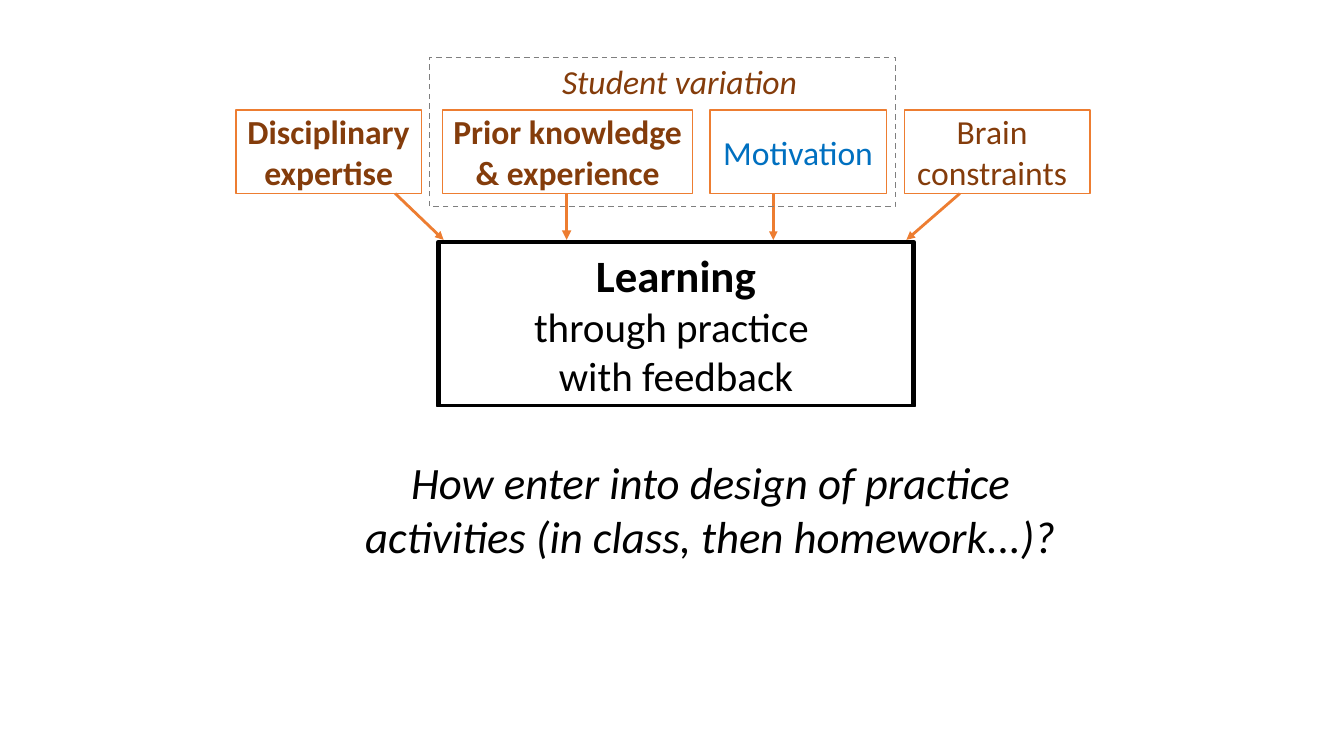
from dataclasses import dataclass

from lxml.etree import SubElement
from pptx import Presentation
from pptx.dml.color import RGBColor
from pptx.enum.dml import MSO_LINE
from pptx.enum.shapes import MSO_CONNECTOR, MSO_SHAPE
from pptx.enum.text import MSO_ANCHOR, PP_ALIGN
from pptx.oxml.ns import qn
from pptx.util import Inches, Pt


@dataclass(frozen=True)
class Theme:
    font: str = "Calibri"
    black: str = "000000"
    white: str = "FFFFFF"
    brown: str = "843C0B"
    blue: str = "0070C0"
    orange: str = "ED7D31"
    gray: str = "7F7F7F"
    label: float = 24
    body: float = 29.3
    heading: float = 32


THEME = Theme()


def add_box(s, box, line=None, width=1, fill=None, dash=None):
    sp = s.shapes.add_shape(MSO_SHAPE.RECTANGLE, *map(Inches, box))
    sp.shadow.inherit = False
    if fill:
        sp.fill.solid()
        sp.fill.fore_color.rgb = RGBColor.from_string(fill)
    else:
        sp.fill.background()
    if line:
        sp.line.color.rgb = RGBColor.from_string(line)
        sp.line.width = Pt(width)
        sp.line.dash_style = dash
    else:
        sp.line.fill.background()
    return sp


def add_text(sp, text, size=THEME.label, color=THEME.black, bold=False,
             italic=False, first=None, inset_right=0.07):
    """Write centred lines; first holds font settings for the opening line."""
    tf = sp.text_frame
    tf.word_wrap = True
    tf.vertical_anchor = MSO_ANCHOR.MIDDLE
    tf.margin_left, tf.margin_right = Inches(0.07), Inches(inset_right)
    tf.margin_top = tf.margin_bottom = 0
    for i, line in enumerate(text.split("\n")):
        p = tf.paragraphs[0] if i == 0 else tf.add_paragraph()
        p.alignment = PP_ALIGN.CENTER
        r = p.add_run()
        r.text = line
        f = r.font
        f.name, f.size, f.bold, f.italic = THEME.font, Pt(size), bold, italic
        f.color.rgb = RGBColor.from_string(color)
        if i == 0 and first:
            f.size, f.bold = Pt(first["size"]), first["bold"]


def add_arrow(s, start, end, width=2):
    c = s.shapes.add_connector(MSO_CONNECTOR.STRAIGHT,
                               *map(Inches, (*start, *end)))
    c.line.color.rgb = RGBColor.from_string(THEME.orange)
    c.line.width = Pt(width)
    SubElement(c.line._get_or_add_ln(), qn("a:tailEnd"), type="triangle")
    SubElement(c._element.spPr, qn("a:effectLst"))


def add_learning(s, box):
    sp = add_box(s, box, THEME.black, 3, THEME.white)
    add_text(sp, "Learning\nthrough practice \nwith feedback", THEME.body,
             first={"size": THEME.heading, "bold": True})


def add_factors(s, top, height, arrow_end):
    # Left, width, text, format, arrow start x, arrow end x, arrow width
    factors = [
        (2.34, 1.84, "Disciplinary\nexpertise",
         {"color": THEME.brown, "bold": True}, 3.92, 4.4, 2),
        (4.39, 2.48, "Prior knowledge \n& experience",
         {"color": THEME.brown, "bold": True}, 5.62, 5.62, 2.25),
        (7.04, 1.75, "Motivation", {"color": THEME.blue}, 7.67, 7.67, 2),
        (8.97, 1.84, "Brain\nconstraints",
         {"color": THEME.brown, "inset_right": 0.17}, 9.52, 8.99, 2),
    ]
    for left, width, text, fmt, x1, x2, weight in factors:
        sp = add_box(s, (left, top, width, height), THEME.orange)
        add_text(sp, text, **fmt)
        add_arrow(s, (x1, top + height), (x2, arrow_end), weight)


def add_variation_group(s, box):
    left, top, width, height = box
    add_box(s, box, THEME.gray, 1, dash=MSO_LINE.DASH)
    caption = add_box(s, (left + 1.23, top - 0.02, 2.5, 0.5))
    add_text(caption, "Student variation", color=THEME.brown, italic=True)


def add_question(s, box):
    sp = add_box(s, box, THEME.white, 2, THEME.white)
    add_text(sp, "How enter into design of practice\n"
             "activities (in class, then homework...)?",
             THEME.heading, italic=True)


def main():
    prs = Presentation()
    prs.slide_width, prs.slide_height = Inches(13.33), Inches(7.5)
    s = prs.slides.add_slide(prs.slide_layouts[6])

    # Learning and the factors that feed it
    add_learning(s, (4.35, 2.4, 4.71, 1.63))
    add_factors(s, top=1.09, height=0.83, arrow_end=2.38)
    add_variation_group(s, (4.26, 0.57, 4.62, 1.48))

    # Closing question
    add_question(s, (2.12, 4.05, 9.86, 1.99))
    prs.save("out.pptx")


if __name__ == "__main__":
    main()
